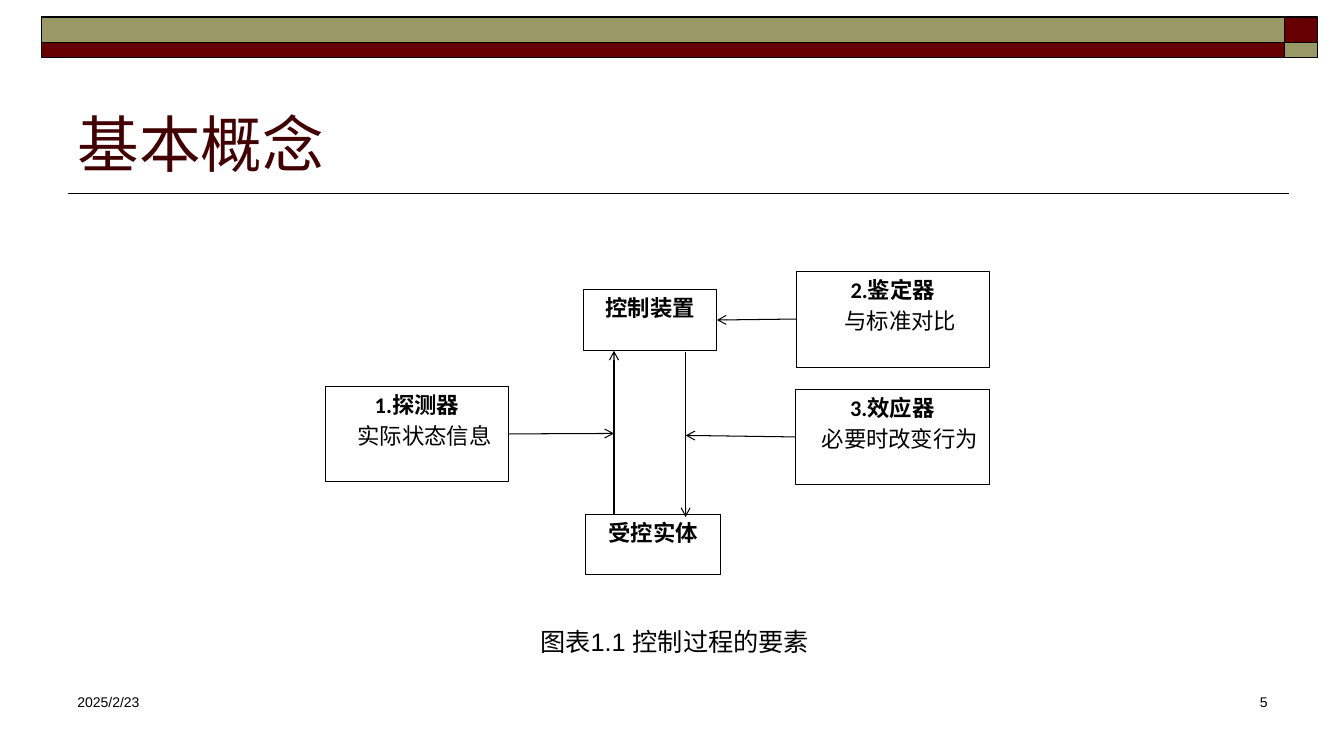
from lxml import etree
from pptx import Presentation
from pptx.dml.color import RGBColor
from pptx.enum.shapes import MSO_CONNECTOR, MSO_SHAPE
from pptx.enum.text import MSO_ANCHOR, MSO_AUTO_SIZE, PP_ALIGN
from pptx.oxml.ns import qn
from pptx.util import Inches, Pt

COLORS = {"black": "000000", "white": "FFFFFF", "maroon": "660000",
          "olive": "999966", "title": "420000"}
CJK_FONT = "Noto Sans CJK SC"
FORMATS = {
    "title": {"size": Pt(44), "name": CJK_FONT},
    "footer": {"size": Pt(10), "name": "Arial"},
    "caption": {"size": Pt(18), "name": "Arial"},
    "heading": {"size": Pt(16), "name": "Calibri", "bold": True},
    "detail": {"size": Pt(16), "name": "Calibri", "bold": False},
}


def write(paragraph, text, style, color="black"):
    """Add a run in a named format, with the CJK font for Chinese characters."""
    run = paragraph.add_run()
    run.text = text
    for attribute, value in FORMATS[style].items():
        setattr(run.font, attribute, value)
    run.font.color.rgb = RGBColor.from_string(COLORS[color])
    etree.SubElement(run.font._element, qn("a:ea"), typeface=CJK_FONT)


def draw_line(x1, y1, x2, y2, width, arrow=True):
    line = slide.shapes.add_connector(
        MSO_CONNECTOR.STRAIGHT, Inches(x1), Inches(y1), Inches(x2), Inches(y2))
    line.line.width = Pt(width)
    line.line.color.rgb = RGBColor.from_string(COLORS["black"])
    if arrow:
        etree.SubElement(line.line._get_or_add_ln(), qn("a:tailEnd"), type="arrow")
    etree.SubElement(line._element.spPr, qn("a:effectLst"))
    return line


presentation = Presentation()
presentation.slide_width = Inches(13.33)
presentation.slide_height = Inches(7.5)
slide = presentation.slides.add_slide(presentation.slide_layouts[6])

# Header band and title rule
draw_line(12.78, 1.92, 0.67, 1.92, 1, arrow=False)
for top, height, band_color, corner_color in [
    (0.17, 0.25, "olive", "maroon"),
    (0.42, 0.15, "maroon", "olive"),
]:
    for left, width, color in [(0.41, 12.33, band_color), (12.74, 0.33, corner_color)]:
        band = slide.shapes.add_shape(
            MSO_SHAPE.RECTANGLE, Inches(left), Inches(top), Inches(width), Inches(height))
        band.shadow.inherit = False
        band.fill.solid()
        band.fill.fore_color.rgb = RGBColor.from_string(COLORS[color])
        band.line.color.rgb = RGBColor.from_string(COLORS["black"])
        band.line.width = Pt(1)

# Title, footer and caption
for text, style, color, align, anchor, fit, place in [
    ("基本概念", "title", "title", PP_ALIGN.LEFT, MSO_ANCHOR.BOTTOM,
     MSO_AUTO_SIZE.NONE, (0.67, 0.58, 12, 1.25)),
    ("2025/2/23", "footer", "black", PP_ALIGN.LEFT, MSO_ANCHOR.TOP,
     MSO_AUTO_SIZE.NONE, (0.67, 6.83, 2.44, 0.5)),
    ("5", "footer", "black", PP_ALIGN.RIGHT, MSO_ANCHOR.TOP,
     MSO_AUTO_SIZE.NONE, (9.89, 6.83, 2.78, 0.5)),
    ("图表1.1 控制过程的要素", "caption", "black", PP_ALIGN.LEFT, MSO_ANCHOR.TOP,
     MSO_AUTO_SIZE.SHAPE_TO_FIT_TEXT, (5.26, 6.16, 3.13, 0.4)),
]:
    frame = slide.shapes.add_textbox(*map(Inches, place)).text_frame
    frame.word_wrap = True
    frame.auto_size = fit
    frame.vertical_anchor = anchor
    frame.paragraphs[0].alignment = align
    write(frame.paragraphs[0], text, style, color)

# Elements of the control process
elements = {}
for heading, detail, place in [
    ("控制装置", None, (5.79, 2.87, 1.32, 0.61)),
    ("受控实体", None, (5.81, 5.1, 1.34, 0.6)),
    ("1.探测器", "实际状态信息", (3.23, 3.83, 1.81, 0.95)),
    ("3.效应器", "必要时改变行为", (7.89, 3.86, 1.92, 0.95)),
    ("2.鉴定器", "与标准对比", (7.9, 2.69, 1.91, 0.95)),
]:
    element = slide.shapes.add_shape(MSO_SHAPE.RECTANGLE, *map(Inches, place))
    element.shadow.inherit = False
    element.fill.solid()
    element.fill.fore_color.rgb = RGBColor.from_string(COLORS["white"])
    element.line.color.rgb = RGBColor.from_string(COLORS["black"])
    element.line.width = Pt(0.5)
    frame = element.text_frame
    frame.word_wrap = True
    frame.vertical_anchor = MSO_ANCHOR.TOP
    write(frame.paragraphs[0], heading, "heading")
    if detail:
        detail_line = frame.add_paragraph()
        detail_line._p.get_or_add_pPr().set("indent", str(Inches(0.15)))
        write(detail_line, detail, "detail")
    for paragraph in frame.paragraphs:
        paragraph.alignment = PP_ALIGN.CENTER
        paragraph.space_before = Pt(3.2)
    elements[heading] = element

# Flows between the elements
draw_line(6.09, 5.1, 6.09, 3.48, 0.75)
draw_line(6.8, 3.49, 6.8, 5.13, 0.75)
detection = draw_line(5.04, 4.31, 6.09, 4.3, 0.75)
detection.begin_connect(elements["1.探测器"], 3)
effect = draw_line(7.89, 4.33, 6.8, 4.32, 0.75)
effect.begin_connect(elements["3.效应器"], 1)
assessment = draw_line(7.9, 3.16, 7.1, 3.18, 0.75)
assessment.begin_connect(elements["2.鉴定器"], 1)
assessment.end_connect(elements["控制装置"], 3)

presentation.save("out.pptx")
